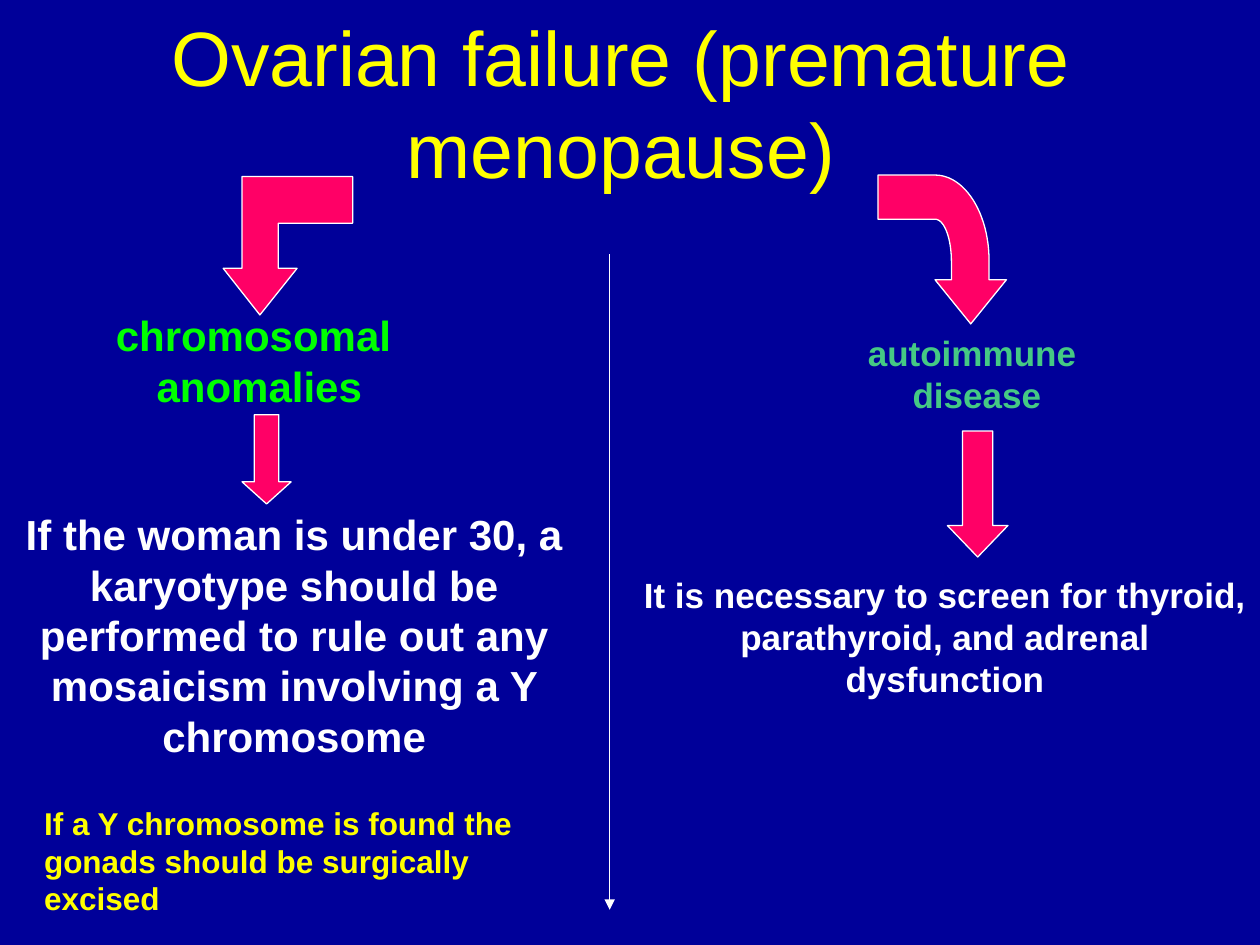
from dataclasses import dataclass
from math import cos, pi, sin

from lxml.etree import SubElement
from pptx import Presentation
from pptx.dml.color import RGBColor as RGB
from pptx.enum.shapes import MSO_CONNECTOR as Connector, MSO_SHAPE as Preset
from pptx.enum.text import MSO_ANCHOR as Anchor, MSO_AUTO_SIZE as AutoSize, PP_ALIGN as Align
from pptx.oxml.ns import qn
from pptx.util import Cm, Pt


@dataclass(frozen=True)
class Theme:
    font: str = "Arial"
    background: RGB = RGB(0x00, 0x00, 0x99)
    yellow: RGB = RGB(0xFF, 0xFF, 0x00)
    green: RGB = RGB(0x00, 0xFF, 0x00)
    teal: RGB = RGB(0x45, 0xC9, 0x84)
    white: RGB = RGB(0xFF, 0xFF, 0xFF)
    pink: RGB = RGB(0xFF, 0x00, 0x66)
    title: Pt = Pt(44)
    large: Pt = Pt(24)
    medium: Pt = Pt(20)
    small: Pt = Pt(18)
    line: Pt = Pt(0.75)


theme = Theme()

presentation = Presentation()
presentation.slide_width, presentation.slide_height = Cm(25.4), Cm(19.05)
slide = presentation.slides.add_slide(presentation.slide_layouts[6])
slide.background.fill.solid()
slide.background.fill.fore_color.rgb = theme.background


def add_text(text, box, size, color, bold=True, align=Align.CENTER):
    shape = slide.shapes.add_textbox(*map(Cm, box))
    frame = shape.text_frame
    frame.word_wrap = True
    frame.auto_size = AutoSize.SHAPE_TO_FIT_TEXT if bold else AutoSize.NONE
    paragraph = frame.paragraphs[0]
    paragraph.alignment = align
    run = paragraph.add_run()
    run.text = text
    run.font.name, run.font.size, run.font.bold = theme.font, size, bold
    run.font.color.rgb = color
    return frame


def style_arrow(shape):
    shape.shadow.inherit = False
    shape.fill.solid()
    shape.fill.fore_color.rgb = theme.pink
    shape.line.color.rgb = theme.white
    shape.line.width = theme.line


# Title
title = add_text("Ovarian failure (premature menopause)", (1.09, 0.27, 22.86, 3.56),
                 theme.title, theme.yellow, bold=False)
title.vertical_anchor = Anchor.MIDDLE
title.margin_top = title.margin_bottom = 0

# Causes, set right to left
for text, box, size, color in (
    ("chromosomal anomalies ", (1.91, 6.12, 6.4, 2.29), theme.large, theme.green),
    ("autoimmune disease ", (16.89, 6.55, 5.41, 1.96), theme.medium, theme.teal),
):
    cause = add_text(text, box, size, color)
    cause.paragraphs[0]._p.get_or_add_pPr().set("rtl", "1")

# Bent arrows from the title to the causes
square_bend = [(5.24, 6.35), (5.99, 5.41), (5.61, 5.41), (5.61, 4.5), (7.11, 4.5),
               (7.11, 3.56), (4.88, 3.56), (4.88, 5.41), (4.5, 5.41)]

center_x, center_y, steps = 18.85, 5.26, 24
angles = [pi / 2 * step / steps for step in range(steps + 1)]
outer_arc = [(center_x + 1.09 * cos(a), center_y - 1.73 * sin(a)) for a in angles]
inner_arc = [(center_x + 0.33 * cos(a), center_y - 0.84 * sin(a)) for a in reversed(angles)]
round_bend = [(19.57, 6.53), (20.29, 5.64), (19.94, 5.64), *outer_arc, (17.7, 3.53),
              (17.7, 4.42), *inner_arc, (19.18, 5.64), (18.85, 5.64)]

for outline in (round_bend, square_bend):
    start, *corners = [(Cm(x), Cm(y)) for x, y in outline]
    builder = slide.shapes.build_freeform(*start)
    builder.add_line_segments(corners, close=True)
    style_arrow(builder.convert_to_shape())

# What to do for each cause
add_text("If the woman is under 30, a karyotype should be performed to rule out any "
         "mosaicism involving a Y chromosome",
         (0, 10.13, 11.86, 6.86), theme.large, theme.white)
add_text("It is necessary to screen for thyroid, parathyroid, and adrenal dysfunction",
         (12.7, 11.43, 12.7, 2.79), theme.medium, theme.white)

# Down arrows from the causes to the actions
for box, head in (((19.1, 8.69, 1.22, 2.54), 0.52), ((4.88, 8.36, 0.99, 1.8), 0.45)):
    arrow = slide.shapes.add_shape(Preset.DOWN_ARROW, *map(Cm, box))
    arrow.adjustments[0], arrow.adjustments[1] = 0.5, head
    style_arrow(arrow)

# Follow-up
add_text("If a Y chromosome is found the gonads should be surgically excised",
         (0.64, 16.08, 11, 2.54), theme.small, theme.yellow, align=Align.LEFT)

# Dividing line with arrowhead
divider = slide.shapes.add_connector(Connector.STRAIGHT, Cm(12.29), Cm(5.13), Cm(12.29), Cm(18.34))
divider.line.color.rgb = theme.white
divider.line.width = theme.line
SubElement(divider.line._get_or_add_ln(), qn("a:tailEnd"), type="triangle")
SubElement(divider._element.spPr, qn("a:effectLst"))

presentation.save("out.pptx")
